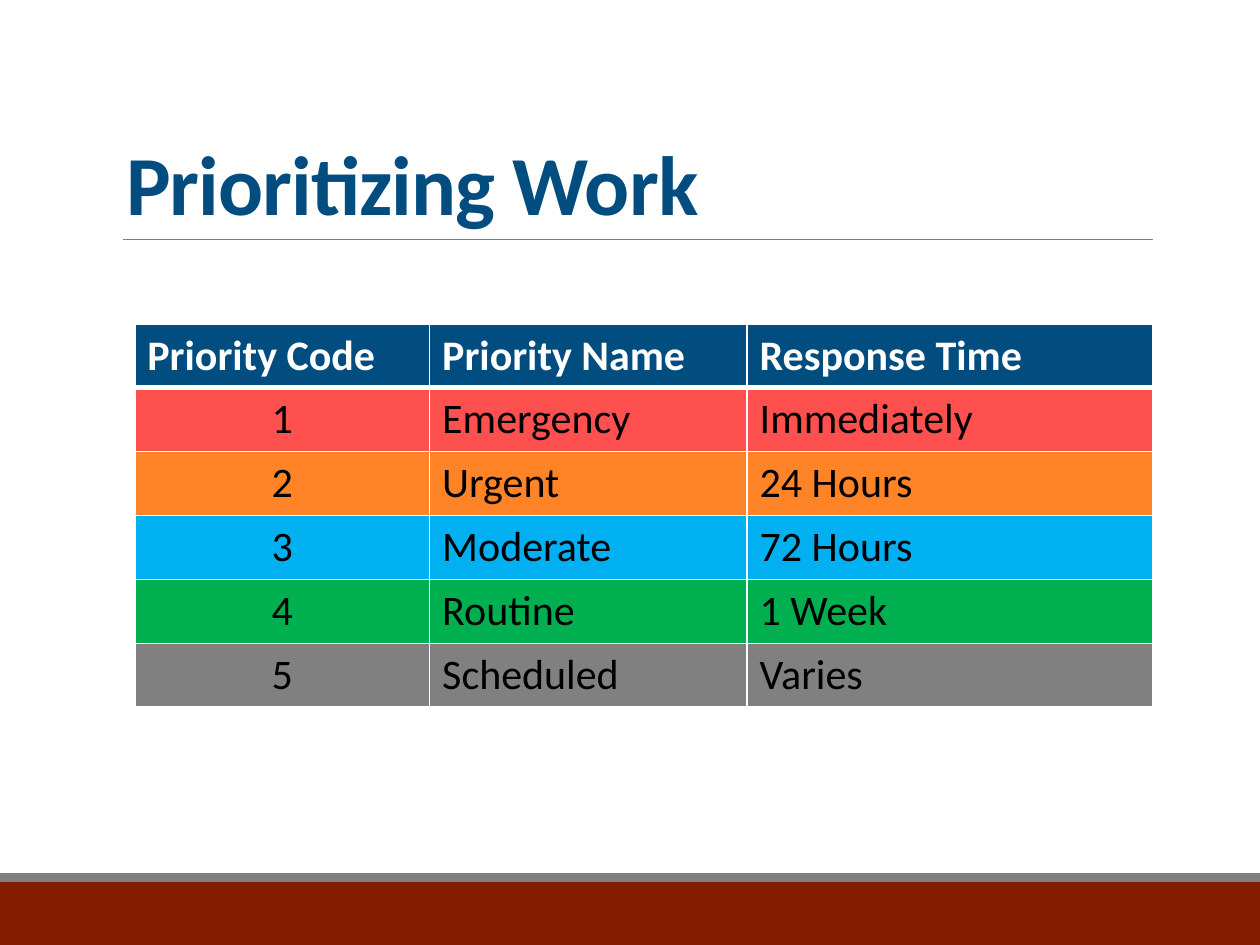
import pptx
import pptx.dml.color
import pptx.enum.shapes
import pptx.enum.text
import pptx.oxml
import pptx.oxml.ns
import pptx.util
from lxml import etree

RGB = pptx.dml.color.RGBColor
ALIGN = pptx.enum.text.PP_ALIGN
ANCHOR = pptx.enum.text.MSO_ANCHOR
qn = pptx.oxml.ns.qn

NAVY = RGB(0x02, 0x4D, 0x80)
MAROON = RGB(0x85, 0x1D, 0x00)
GRAY = RGB(0x80, 0x80, 0x80)
RED = RGB(0xFF, 0x50, 0x50)
ORANGE = RGB(0xFF, 0x84, 0x27)
BLUE = RGB(0x00, 0xB0, 0xF0)
GREEN = RGB(0x00, 0xB0, 0x50)
WHITE = RGB(0xFF, 0xFF, 0xFF)
BLACK = RGB(0x00, 0x00, 0x00)

# Grid: 100 columns by 75 rows
COLS, ROWS = 100, 75

HEADER = ["Priority Code", "Priority Name", "Response Time"]
PRIORITIES = [
    ("Emergency", "Immediately", RED),
    ("Urgent", "24 Hours", ORANGE),
    ("Moderate", "72 Hours", BLUE),
    ("Routine", "1 Week", GREEN),
    ("Scheduled", "Varies", GRAY),
]


class Deck:
    FONT = "Calibri"

    def __init__(self):
        self.prs = pptx.Presentation()
        self.prs.slide_width = pptx.util.Inches(10)
        self.prs.slide_height = pptx.util.Inches(7.5)
        self.s = self.prs.slides.add_slide(self.prs.slide_layouts[5])

    def x(self, col):
        return round(self.prs.slide_width * col / COLS)

    def y(self, row):
        return round(self.prs.slide_height * row / ROWS)

    def box(self, col, row, width, height):
        return self.x(col), self.y(row), self.x(width), self.y(height)

    def add_text(self, tf, text, size, color, bold=False, align=ALIGN.LEFT):
        p = tf.paragraphs[0]
        p.alignment = align
        r = p.add_run()
        r.text = text
        style = {"name": self.FONT, "size": pptx.util.Pt(size), "bold": bold}
        for name, value in style.items():
            setattr(r.font, name, value)
        r.font.color.rgb = color
        return p

    def title(self, text, *place):
        sp = self.s.shapes.title
        sp.left, sp.top, sp.width, sp.height = self.box(*place)
        frame = {"word_wrap": True, "vertical_anchor": ANCHOR.BOTTOM,
                 "auto_size": pptx.enum.text.MSO_AUTO_SIZE.NONE}
        for name, value in frame.items():
            setattr(sp.text_frame, name, value)
        p = self.add_text(sp.text_frame, text, 48, NAVY, bold=True)
        p.line_spacing = 0.85
        p.runs[0].font._element.set("spc", "-50")

    def rule(self, left, right, row, color, width):
        sp = self.s.shapes.add_connector(
            pptx.enum.shapes.MSO_CONNECTOR.STRAIGHT,
            self.x(left), self.y(row), self.x(right), self.y(row))
        sp.line.color.rgb = color
        sp.line.width = pptx.util.Pt(width)
        etree.SubElement(sp._element.spPr, qn("a:effectLst"))

    def band(self, color, *place):
        sp = self.s.shapes.add_shape(
            pptx.enum.shapes.MSO_SHAPE.RECTANGLE, *self.box(*place))
        sp.shadow.inherit = False
        sp.fill.solid()
        sp.fill.fore_color.rgb = color
        sp.line.fill.background()

    def borders(self, cell, widths):
        tcPr = cell._tc.get_or_add_tcPr()
        for side, width in zip("LRTB", widths):
            ln = etree.SubElement(tcPr, qn(f"a:ln{side}"),
                                  w=str(pptx.util.Pt(width)))
            fill = etree.SubElement(ln, qn("a:solidFill"))
            etree.SubElement(fill, qn("a:srgbClr"), val=str(WHITE))

    def table(self, rows, fills, widths, left, top, row_height):
        place = self.box(left, top, sum(widths), row_height * len(rows))
        tbl = self.s.shapes.add_table(len(rows), len(widths), *place).table
        for column, width in zip(tbl.columns, widths):
            column.width = self.x(width)
        for i, (texts, fill) in enumerate(zip(rows, fills)):
            head = i == 0
            for j, text in enumerate(texts):
                cell = tbl.cell(i, j)
                self.borders(cell, (1, 1, 3 if i == 1 else 1, 3 if head else 1))
                cell.fill.solid()
                cell.fill.fore_color.rgb = fill
                centred = j == 0 and not head
                self.add_text(cell.text_frame, text, 24,
                              WHITE if head else BLACK, bold=head,
                              align=ALIGN.CENTER if centred else ALIGN.LEFT)


def main():
    deck = Deck()

    # Footer bands and title rule
    deck.band(MAROON, 0, 70, COLS, 5)
    deck.band(GRAY, 0, 69.3, COLS, 0.7)
    deck.rule(9.8, 91.5, 19, GRAY, 0.5)

    # Title
    deck.title("Prioritizing Work", 9, 3.1, 82.5, 15.9)

    # Priority table
    rows = [HEADER] + [(str(code), name, time) for code, (name, time, _)
                       in enumerate(PRIORITIES, start=1)]
    fills = [NAVY] + [color for _, _, color in PRIORITIES]
    deck.table(rows, fills, (23.4, 25.2, 32.2), 10.7, 25.7, 5)

    deck.prs.save("out.pptx")


if __name__ == "__main__":
    main()
